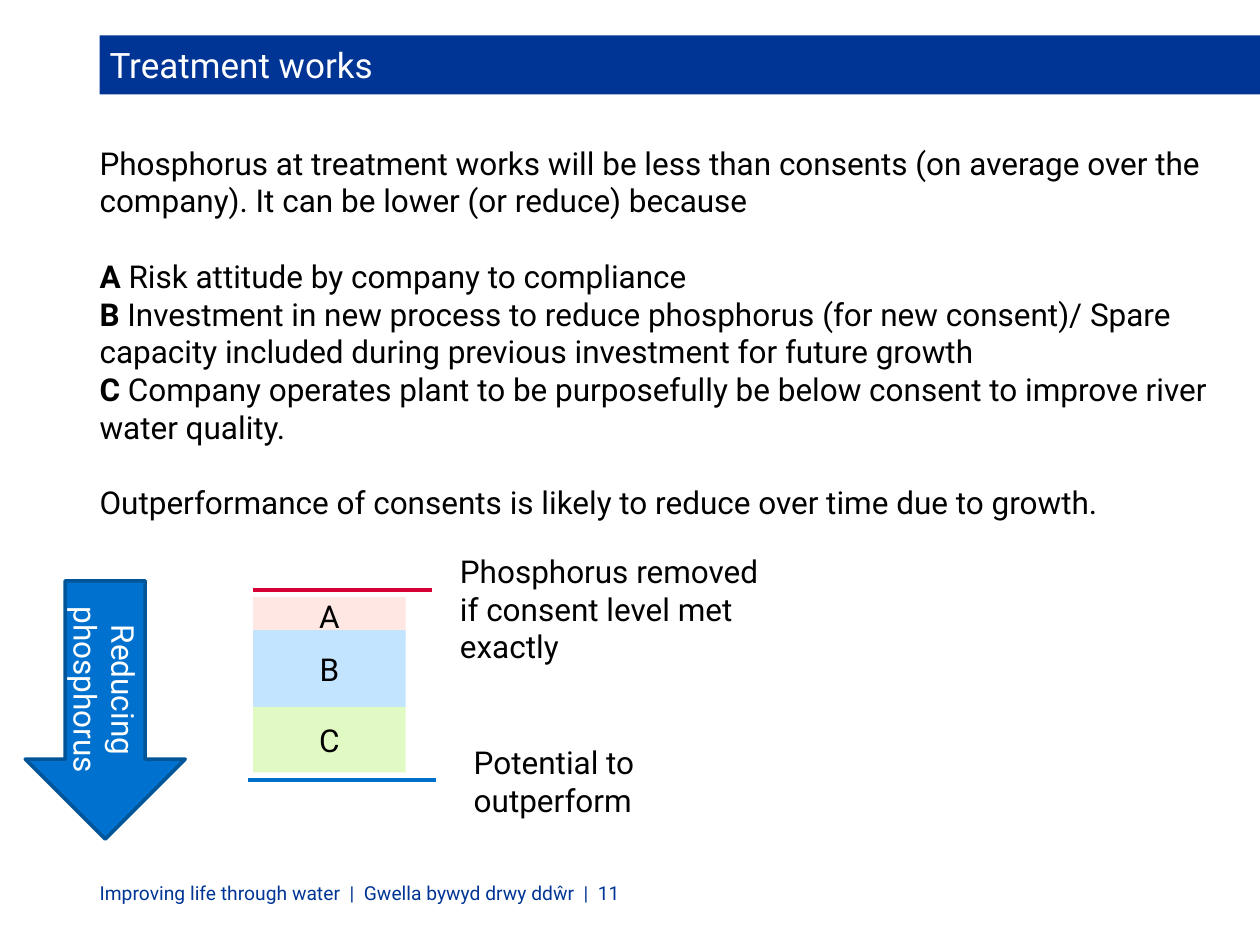
from typing import NamedTuple

from lxml.etree import SubElement
from pptx import Presentation
from pptx.dml.color import RGBColor
from pptx.enum.shapes import MSO_CONNECTOR, MSO_SHAPE
from pptx.enum.text import MSO_ANCHOR, MSO_AUTO_SIZE, PP_ALIGN
from pptx.oxml.ns import qn
from pptx.util import Inches, Pt

FONT = "Roboto"
NAVY = RGBColor(0x00, 0x35, 0x95)
BLUE = RGBColor(0x00, 0x71, 0xCE)
DARK_BLUE = RGBColor(0x00, 0x54, 0x98)
LINE_BLUE = RGBColor(0x00, 0x6F, 0xC9)
CRIMSON = RGBColor(0xD6, 0x00, 0x37)
PINK = RGBColor(0xFF, 0xE7, 0xE3)
PALE_BLUE = RGBColor(0xC2, 0xE4, 0xFF)
PALE_GREEN = RGBColor(0xE1, 0xFA, 0xC3)
BLACK = RGBColor(0x00, 0x00, 0x00)
WHITE = RGBColor(0xFF, 0xFF, 0xFF)

LEFT_MARGIN = 0.79
BAND_LEFT, BAND_WIDTH = 2.01, 1.21
BLANK_LINE = Pt(21.5)


class Box(NamedTuple):
    left: float
    top: float
    width: float
    height: float


class Statement(NamedTuple):
    label: str
    wording: str
    starts_group: bool = False


class Band(NamedTuple):
    label: str
    top: float
    height: float
    color: RGBColor
    anchor: MSO_ANCHOR


class Level(NamedTuple):
    left: float
    right: float
    y: float
    color: RGBColor


class Caption(NamedTuple):
    text: str
    box: Box
    size: float = 18
    color: RGBColor = BLACK
    anchor: MSO_ANCHOR = MSO_ANCHOR.TOP


STATEMENTS = [
    Statement("", "Phosphorus at treatment works will be less than consents "
                  "(on average over the company). It can be lower (or reduce) because"),
    Statement("A", " Risk attitude by company to compliance", True),
    Statement("B", " Investment in new process to reduce phosphorus (for new consent)/ "
                   "Spare capacity included during previous investment for future growth"),
    Statement("C", " Company operates plant to be purposefully be below consent "
                   "to improve river water quality."),
    Statement("", "Outperformance of consents is likely to reduce over time due to growth.", True),
]
BANDS = [
    Band("A", 4.74, 0.3, PINK, MSO_ANCHOR.TOP),
    Band("B", 5, 0.61, PALE_BLUE, MSO_ANCHOR.MIDDLE),
    Band("C", 5.61, 0.52, PALE_GREEN, MSO_ANCHOR.MIDDLE),
]
LEVELS = [Level(2.01, 3.43, 4.68, CRIMSON), Level(1.97, 3.46, 6.19, LINE_BLUE)]
CAPTIONS = [
    Caption("Phosphorus removed\nif consent level met exactly", Box(3.65, 4.38, 2.55, 0.91)),
    Caption("Potential to\noutperform", Box(3.76, 5.9, 3.08, 0.61)),
    Caption("Improving life through water  |  Gwella bywyd drwy ddŵr  |  11",
            Box(LEFT_MARGIN, 6.99, 5.12, 0.19), 11, NAVY, MSO_ANCHOR.MIDDLE),
]


def inches(box: Box) -> list:
    return [Inches(length) for length in box]


def place(shape, box: Box) -> None:
    shape.left, shape.top, shape.width, shape.height = inches(box)


def set_frame(frame, anchor: MSO_ANCHOR, insets=(0, 0, 0, 0)) -> None:
    frame.word_wrap = True
    frame.auto_size = MSO_AUTO_SIZE.NONE
    frame.vertical_anchor = anchor
    (frame.margin_left, frame.margin_top,
     frame.margin_right, frame.margin_bottom) = [Inches(inset) for inset in insets]


def style_text(frame, size: float, color: RGBColor, align: PP_ALIGN = PP_ALIGN.LEFT) -> None:
    for paragraph in frame.paragraphs:
        paragraph.alignment = align
        for run in paragraph.runs:
            run.font.name = FONT
            run.font.size = Pt(size)
            run.font.color.rgb = color


def fill_title(title) -> None:
    place(title, Box(LEFT_MARGIN, 0.28, 9.21, 0.47))
    title.fill.solid()
    title.fill.fore_color.rgb = NAVY
    title.text_frame.text = "Treatment works"
    set_frame(title.text_frame, MSO_ANCHOR.MIDDLE, (0.08, 0.04, 0.39, 0.04))
    style_text(title.text_frame, 20, WHITE)


def fill_body(body) -> None:
    place(body, Box(LEFT_MARGIN, 1.14, 8.97, 4.24))
    frame = body.text_frame
    set_frame(frame, MSO_ANCHOR.TOP)
    for index, statement in enumerate(STATEMENTS):
        paragraph = frame.add_paragraph() if index else frame.paragraphs[0]
        properties = paragraph._p.get_or_add_pPr()
        properties.set("marL", "0")
        properties.set("indent", "0")
        SubElement(properties, qn("a:buNone"))
        paragraph.space_before = BLANK_LINE if statement.starts_group else Pt(0)
        if statement.label:
            label = paragraph.add_run()
            label.text = statement.label
            label.font.bold = True
        paragraph.add_run().text = statement.wording
    style_text(frame, 18, BLACK)


def add_caption(shapes, caption: Caption) -> None:
    frame = shapes.add_textbox(*inches(caption.box)).text_frame
    frame.text = caption.text
    set_frame(frame, caption.anchor)
    style_text(frame, caption.size, caption.color)


def add_level(shapes, level: Level) -> None:
    y = Inches(level.y)
    line = shapes.add_connector(MSO_CONNECTOR.STRAIGHT, Inches(level.left), y,
                                Inches(level.right), y)
    line.line.color.rgb = level.color
    line.line.width = Pt(2.25)
    SubElement(line._element.spPr, qn("a:effectLst"))


def add_filled(shapes, kind: MSO_SHAPE, box: Box, color: RGBColor):
    shape = shapes.add_shape(kind, *inches(box))
    shape.shadow.inherit = False
    shape.fill.solid()
    shape.fill.fore_color.rgb = color
    shape.line.fill.background()
    return shape


def add_band(shapes, band: Band) -> None:
    box = Box(BAND_LEFT, band.top, BAND_WIDTH, band.height)
    frame = add_filled(shapes, MSO_SHAPE.RECTANGLE, box, band.color).text_frame
    frame.text = band.label
    set_frame(frame, band.anchor)
    style_text(frame, 18, BLACK, PP_ALIGN.CENTER)


def add_reduction_arrow(shapes) -> None:
    arrow = add_filled(shapes, MSO_SHAPE.DOWN_ARROW, Box(0.2, 4.61, 1.27, 2.05), BLUE)
    arrow.line.color.rgb = DARK_BLUE
    arrow.line.width = Pt(2)
    frame = arrow.text_frame
    frame.text = "Reducing phosphorus"
    set_frame(frame, MSO_ANCHOR.MIDDLE, (0.1, 0.05, 0.1, 0.05))
    frame._txBody.bodyPr.set("vert", "vert")
    style_text(frame, 18, WHITE, PP_ALIGN.CENTER)


def main() -> None:
    presentation = Presentation()
    presentation.slide_width, presentation.slide_height = Inches(10), Inches(7.5)
    slide = presentation.slides.add_slide(presentation.slide_layouts[1])
    fill_title(slide.shapes.title)
    fill_body(slide.placeholders[1])
    for level in LEVELS:
        add_level(slide.shapes, level)
    for band in BANDS:
        add_band(slide.shapes, band)
    add_reduction_arrow(slide.shapes)
    for caption in CAPTIONS:
        add_caption(slide.shapes, caption)
    presentation.save("out.pptx")


if __name__ == "__main__":
    main()
